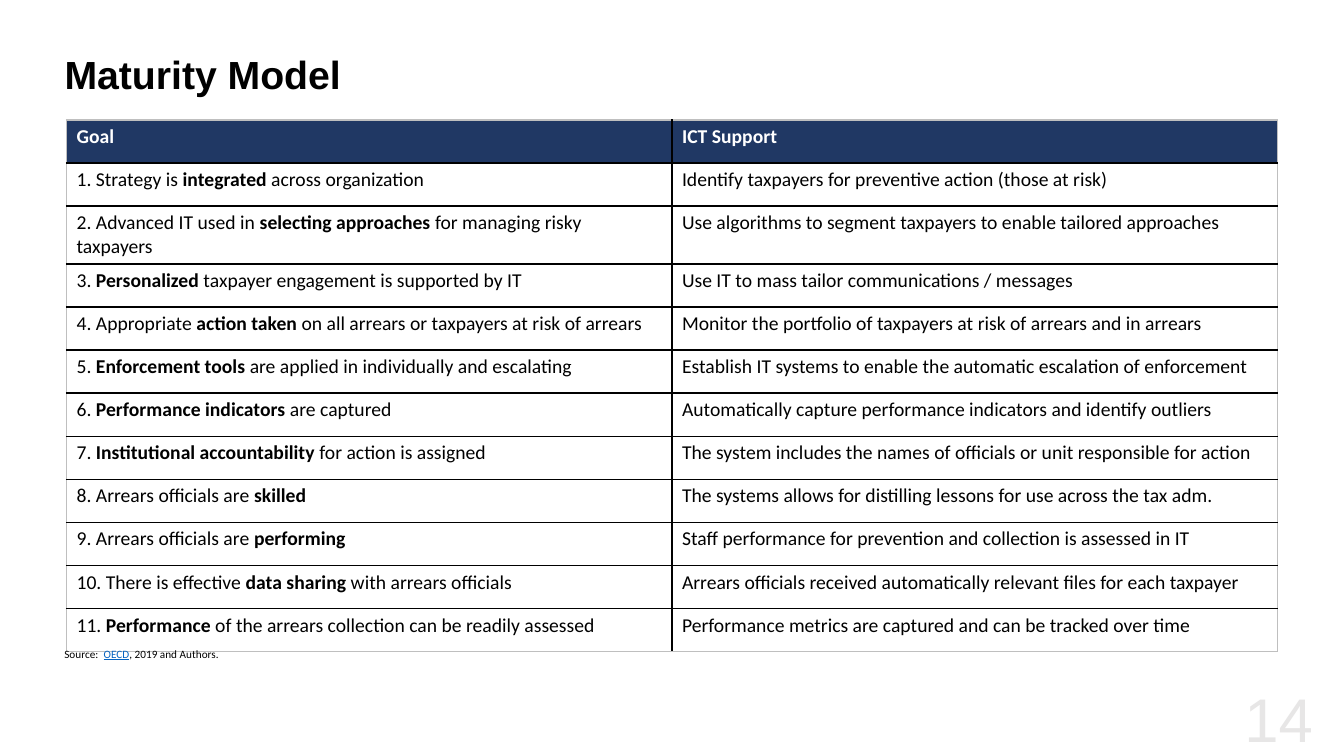
from dataclasses import dataclass

from pptx import Presentation, util as u
from pptx.dml.color import RGBColor
from pptx.enum import text
from pptx.oxml import parse_xml
from pptx.oxml.ns import nsdecls


@dataclass(frozen=True)
class Theme:
    heading_font: str = "Arial"
    body_font: str = "Calibri"
    ink: str = "000000"
    white: str = "FFFFFF"
    navy: str = "203864"
    frame: str = "BFBFBF"
    link: str = "0563C1"
    faint: str = "E7E6E6"
    title_size: int = 28
    table_size: int = 14
    source_size: int = 8
    number_size: int = 44


THEME = Theme()

# Asterisk pairs mark the bold words
ROWS = [
    ("**Goal**", "**ICT Support**"),
    ("1. Strategy is **integrated** across organization",
     "Identify taxpayers for preventive action (those at risk)"),
    ("2. Advanced IT used in **selecting approaches **for managing risky taxpayers",
     "Use algorithms to segment taxpayers to enable tailored approaches"),
    ("3. **Personalized** taxpayer engagement is supported by IT",
     "Use IT to mass tailor communications / messages"),
    ("4. Appropriate** action taken **on all arrears or taxpayers at risk of arrears",
     "Monitor the portfolio of taxpayers at risk of arrears and in arrears"),
    ("5. **Enforcement tools **are applied in individually and escalating",
     "Establish IT systems to enable the automatic escalation of enforcement"),
    ("6. **Performance indicators** are captured",
     "Automatically capture performance indicators and identify outliers"),
    ("7. **Institutional accountability** for action is assigned",
     "The system includes the names of officials or unit responsible for action"),
    ("8. Arrears officials are **skilled**",
     "The systems allows for distilling lessons for use across the tax adm."),
    ("9. Arrears officials are **performing**",
     "Staff performance for prevention and collection is assessed in IT"),
    ("10. There is effective **data sharing **with arrears officials",
     "Arrears officials received automatically relevant files for each taxpayer"),
    ("11. **Performance** of the arrears collection can be readily assessed",
     "Performance metrics are captured and can be tracked over time"),
]


def add_span(para, words, *, size, font=THEME.body_font, color=THEME.ink,
             bold=False, underline=False):
    span = para.add_run()
    span.text = words
    span.font.name = font
    span.font.size = u.Pt(size)
    span.font.bold = bold
    span.font.underline = underline
    span.font.color.rgb = RGBColor.from_string(color)


def add_text_box(page, box):
    frame = page.shapes.add_textbox(*map(u.Inches, box)).text_frame
    frame.word_wrap = True
    return frame


def add_title(page, box, words):
    title = page.shapes.title
    title.left, title.top, title.width, title.height = map(u.Inches, box)
    frame = title.text_frame
    frame.vertical_anchor = text.MSO_ANCHOR.MIDDLE
    para = frame.paragraphs[0]
    para.alignment = text.PP_ALIGN.LEFT
    para.line_spacing = 0.9
    add_span(para, words, size=THEME.title_size, font=THEME.heading_font, bold=True)


def set_borders(cell, colors):
    """Draw 1 pt cell edges; colors run left, right, top, bottom."""
    properties = cell._tc.get_or_add_tcPr()
    for index, (side, color) in enumerate(zip("LRTB", colors)):
        properties.insert(index, parse_xml(
            f'<a:ln{side} {nsdecls("a")} w="12700"><a:solidFill>'
            f'<a:srgbClr val="{color}"/></a:solidFill></a:ln{side}>'))


def add_maturity_table(page, box, rows):
    row_count, column_count = len(rows), len(rows[0])
    table = page.shapes.add_table(row_count, column_count, *map(u.Inches, box)).table
    table.horz_banding = False
    for row, entries in enumerate(rows):
        for column, entry in enumerate(entries):
            cell = table.cell(row, column)
            header = row == 0
            if header:
                cell.fill.solid()
                cell.fill.fore_color.rgb = RGBColor.from_string(THEME.navy)
            else:
                cell.fill.background()
            # Grey outer frame, black inner lines
            outer = (column == 0, column == column_count - 1,
                     header, row == row_count - 1)
            set_borders(cell, [THEME.frame if edge else THEME.ink for edge in outer])
            para = cell.text_frame.paragraphs[0]
            for index, words in enumerate(entry.split("**")):
                if words:
                    add_span(para, words, size=THEME.table_size, bold=index % 2 == 1,
                             color=THEME.white if header else THEME.ink)


def add_source(page, box):
    para = add_text_box(page, box).paragraphs[0]
    add_span(para, "Source:  ", size=THEME.source_size)
    add_span(para, "OECD", size=THEME.source_size, color=THEME.link, underline=True)
    add_span(para, ", 2019 and Authors.", size=THEME.source_size)


def add_page_number(page, box, number):
    frame = add_text_box(page, box)
    frame.vertical_anchor = text.MSO_ANCHOR.MIDDLE
    para = frame.paragraphs[0]
    para.alignment = text.PP_ALIGN.RIGHT
    add_span(para, number, size=THEME.number_size, font=THEME.heading_font,
             color=THEME.faint)


def main():
    deck = Presentation()
    deck.slide_width, deck.slide_height = u.Inches(13.33), u.Inches(7.5)
    page = deck.slides.add_slide(deck.slide_layouts.get_by_name("Title Only"))
    add_title(page, (0.54, 0.4, 12.23, 0.72), "Maturity Model")
    add_maturity_table(page, (0.66, 1.19, 12.01, 5.13), ROWS)
    add_source(page, (0.54, 6.37, 6.7, 0.24))
    add_page_number(page, (11.12, 6.75, 2, 0.75), "14")
    deck.save("out.pptx")


if __name__ == "__main__":
    main()
